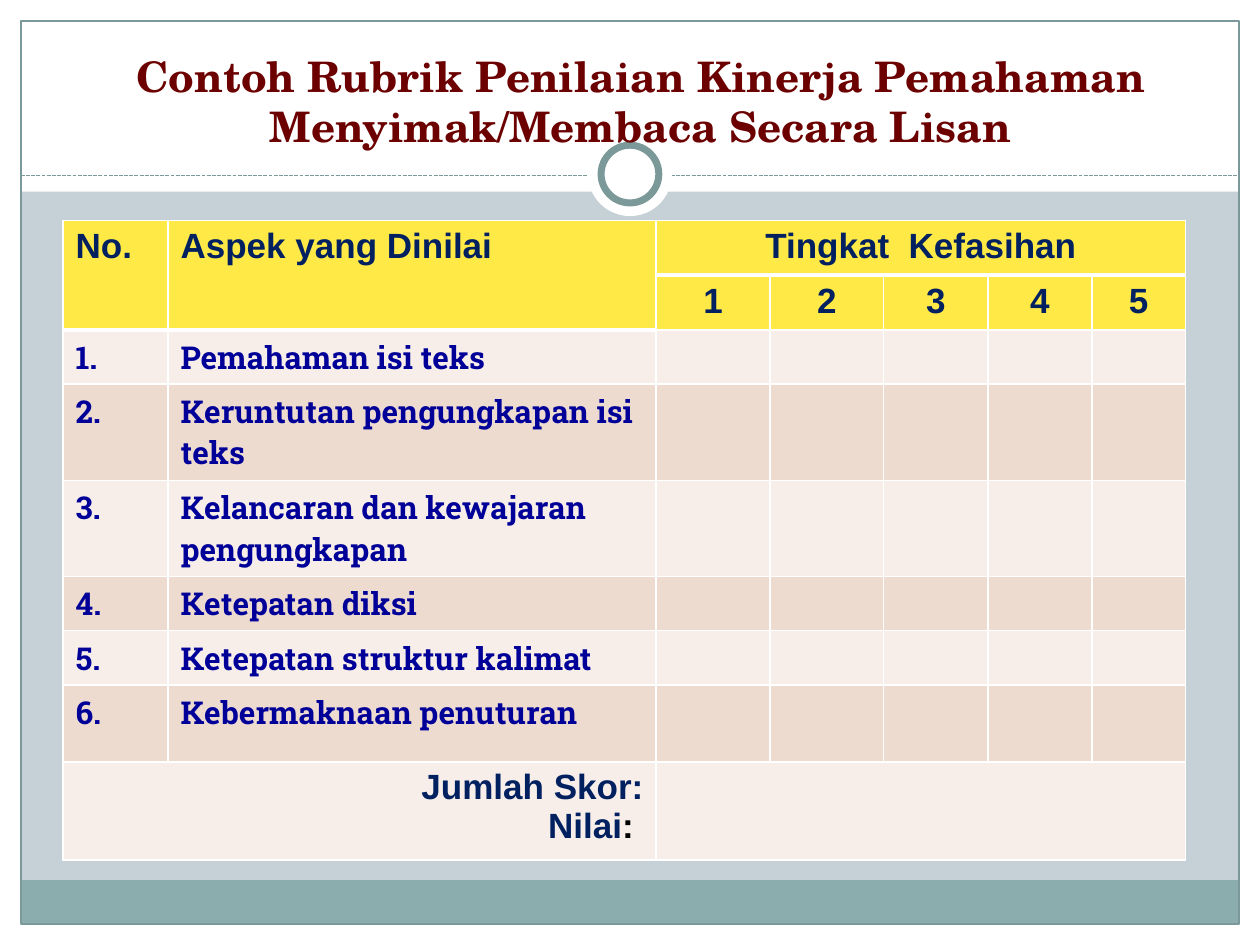
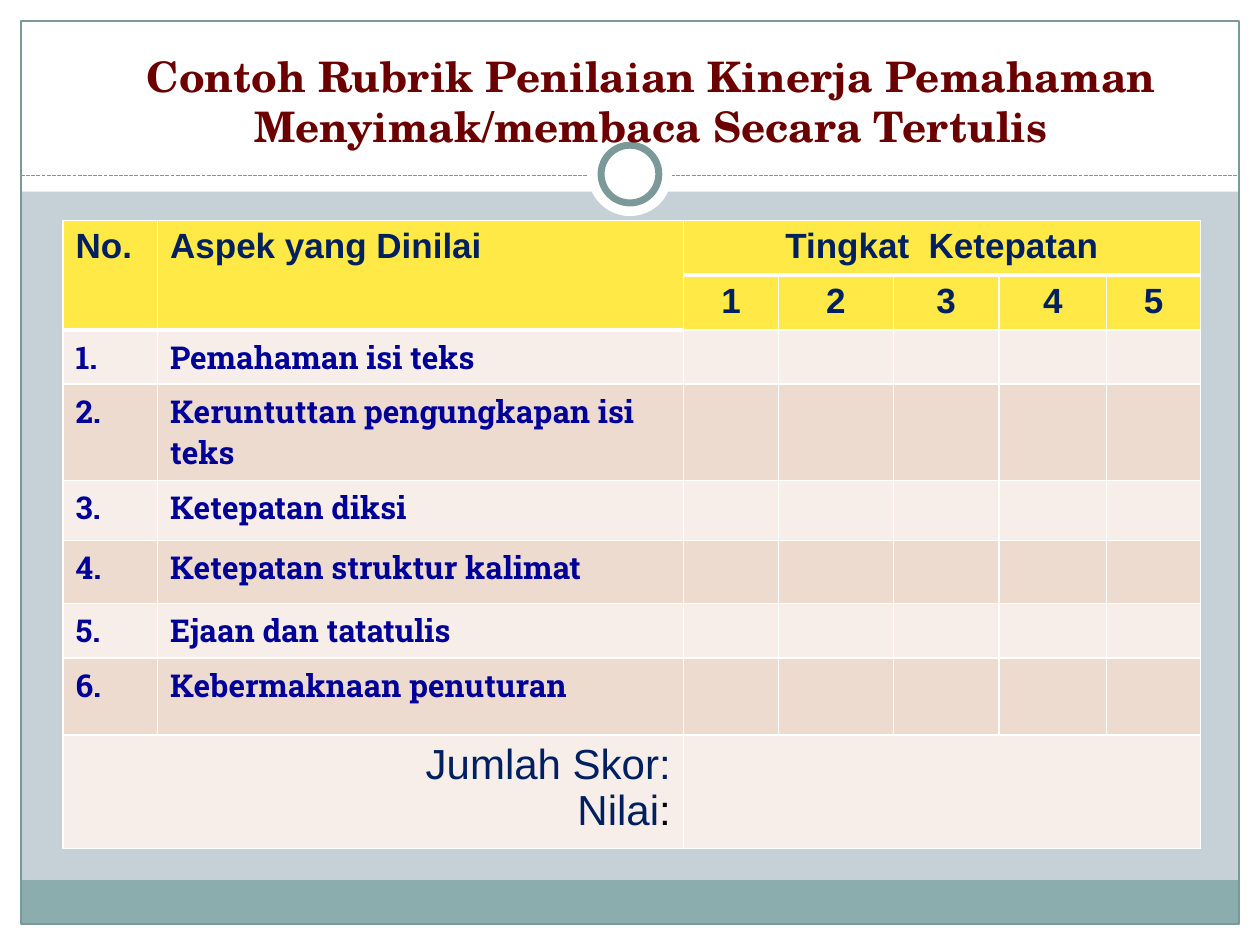
from lxml import etree
from pptx import Presentation
from pptx.dml.color import RGBColor
from pptx.enum import dml, shapes, text
from pptx.oxml.ns import qn
from pptx.util import Pt

COLORS = {
    "backdrop": "C5D1D7", "white": "FFFFFF", "teal": "8CADAE", "frame": "7C999A",
    "title": "6C0000", "header": "FFE947", "light": "F7EEE9", "dark": "EEDBD0",
    "navy": "002060", "blue": "000099", "black": "000000",
}
RGB = {name: RGBColor.from_string(value) for name, value in COLORS.items()}
LEFT, CENTER, RIGHT = text.PP_ALIGN.LEFT, text.PP_ALIGN.CENTER, text.PP_ALIGN.RIGHT

# Shared decoration: shape, left, top, width, height, fill, line, line width
DECORATION = [
    ("RECTANGLE", 0, 528, 720, 12, "white", None, 0),
    ("RECTANGLE", 0, 0, 720, 109.5, "white", None, 0),
    ("RECTANGLE", 0, 0, 12, 540, "white", None, 0),
    ("RECTANGLE", 708, 0, 12, 540, "white", None, 0),
    ("RECTANGLE", 12, 503, 696, 25, "teal", None, 0),
    ("RECTANGLE", 12, 12, 696, 516, None, "frame", 0.75),
    ("OVAL", 336, 75.5, 48, 48, "white", None, 0),
    ("OVAL", 343.5, 83, 33, 33, "white", "frame", 4),
]

# What differs between the two rubrics
RUBRICS = [
    {
        "title": "Contoh Rubrik Penilaian Kinerja Pemahaman Menyimak/Membaca Secara Lisan",
        "title_area": (42, 24, 648, 66),
        "scale": "Tingkat  Kefasihan",
        "aspects": ["Pemahaman isi teks", "Keruntutan pengungkapan isi teks",
                    "Kelancaran dan kewajaran pengungkapan", "Ketepatan diksi",
                    "Ketepatan struktur kalimat", "Kebermaknaan penuturan"],
        "columns": [60, 279, 65, 65, 59.5, 59.5, 53.5],
        "rows": [29.5, 29.5, 31, 55, 55, 31, 31, 44, 56],
        "total_size": 20, "total_bold": True, "total_end": ": ",
    },
    {
        "title": "Contoh Rubrik Penilaian Kinerja Pemahaman Menyimak/membaca Secara Tertulis",
        "title_area": (48, 0, 648, 90),
        "scale": "Tingkat  Ketepatan",
        "aspects": ["Pemahaman isi teks", "Keruntuttan pengungkapan isi teks",
                    "Ketepatan diksi", "Ketepatan struktur kalimat",
                    "Ejaan dan tatatulis", "Kebermaknaan penuturan"],
        "columns": [54, 300.5, 54.5, 65.5, 60.5, 61.5, 53.5],
        "rows": [29.5, 29.5, 31, 55, 34.5, 36, 31, 44, 60.5],
        "total_size": 24, "total_bold": False, "total_end": ":",
    },
]


def write(frame, words, size, font, color, align=LEFT, bold=True):
    frame.text = words
    for para in frame.paragraphs:
        para.alignment = align
        for span in para.runs:
            span.font.size, span.font.name, span.font.bold = Pt(size), font, bold
            span.font.color.rgb = RGB[color]


def style_cell(cell, fill, bottom=1):
    properties = cell._tc.get_or_add_tcPr()
    for side, width in (("L", 1), ("R", 1), ("T", 1), ("B", bottom)):
        edge = etree.SubElement(properties, qn(f"a:ln{side}"), w=str(Pt(width)))
        solid = etree.SubElement(edge, qn("a:solidFill"))
        etree.SubElement(solid, qn("a:srgbClr"), val=COLORS["white"])
    cell.fill.solid()
    cell.fill.fore_color.rgb = RGB[fill]


deck = Presentation()
deck.slide_width, deck.slide_height = Pt(720), Pt(540)
master_fill = deck.slide_master.background.fill
master_fill.solid()
master_fill.fore_color.rgb = RGB["backdrop"]

for rubric in RUBRICS:
    page = deck.slides.add_slide(deck.slide_layouts[6])

    # Bands, frame and ring, with the dashed rule just below the ring
    for kind, left, top, width, height, fill, line, weight in DECORATION:
        if kind == "OVAL" and not line:
            rule = page.shapes.add_connector(
                shapes.MSO_CONNECTOR.STRAIGHT, Pt(12), Pt(100.5), Pt(708), Pt(100.5))
            rule.line.color.rgb = RGB["frame"]
            rule.line.width = Pt(0.75)
            rule.line.dash_style = dml.MSO_LINE.SQUARE_DOT
            etree.SubElement(rule._element.spPr, qn("a:effectLst"))
        shape = page.shapes.add_shape(
            getattr(shapes.MSO_SHAPE, kind), Pt(left), Pt(top), Pt(width), Pt(height))
        shape.shadow.inherit = False
        if fill:
            shape.fill.solid()
            shape.fill.fore_color.rgb = RGB[fill]
        else:
            shape.fill.background()
        if line:
            shape.line.color.rgb = RGB[line]
            shape.line.width = Pt(weight)
        else:
            shape.line.fill.background()

    # Title
    box = page.shapes.add_textbox(*map(Pt, rubric["title_area"]))
    box.text_frame.word_wrap = True
    box.text_frame.vertical_anchor = text.MSO_ANCHOR.BOTTOM
    write(box.text_frame, rubric["title"], 24, "TeX Gyre Schola", "title", CENTER)

    # Table grid
    columns, rows = rubric["columns"], rubric["rows"]
    table = page.shapes.add_table(
        len(rows), len(columns), Pt(36), Pt(126), Pt(sum(columns)), Pt(sum(rows))).table
    table.first_row = table.horz_banding = False
    for column, width in zip(table.columns, columns):
        column.width = Pt(width)
    for row, height in zip(table.rows, rows):
        row.height = Pt(height)
    for r in range(len(rows)):
        for c in range(len(columns)):
            fill = "header" if r < 2 else ("light", "dark")[r % 2]
            thick = r == 0 or (r == 1 and c < 2)
            style_cell(table.cell(r, c), fill, 3 if thick else 1)
    last = len(rows) - 1
    for start, end in (((0, 0), (1, 0)), ((0, 1), (1, 1)), ((0, 2), (0, 6)),
                       ((last, 0), (last, 1)), ((last, 2), (last, 6))):
        table.cell(*start).merge(table.cell(*end))

    # Header
    for c, (words, align) in enumerate(
            [("No.", LEFT), ("Aspek yang Dinilai", LEFT), (rubric["scale"], CENTER)]):
        write(table.cell(0, c).text_frame, words, 20, "Arial", "navy", align)
    for score in range(1, 6):
        write(table.cell(1, score + 1).text_frame, str(score), 20, "Arial", "navy", CENTER)

    # Aspects
    for number, aspect in enumerate(rubric["aspects"], 1):
        for c, words in enumerate((f"{number}.", aspect)):
            write(table.cell(number + 1, c).text_frame, words, 18, "Roboto Slab", "blue")

    # Totals, ending in a black colon
    total = table.cell(last, 0).text_frame
    size, bold = rubric["total_size"], rubric["total_bold"]
    write(total, "Jumlah Skor:\nNilai", size, "Arial", "navy", RIGHT, bold)
    colon = total.paragraphs[1].add_run()
    colon.text = rubric["total_end"]
    colon.font.size, colon.font.name, colon.font.bold = Pt(size), "Arial", bold
    colon.font.color.rgb = RGB["black"]

deck.save("out.pptx")
